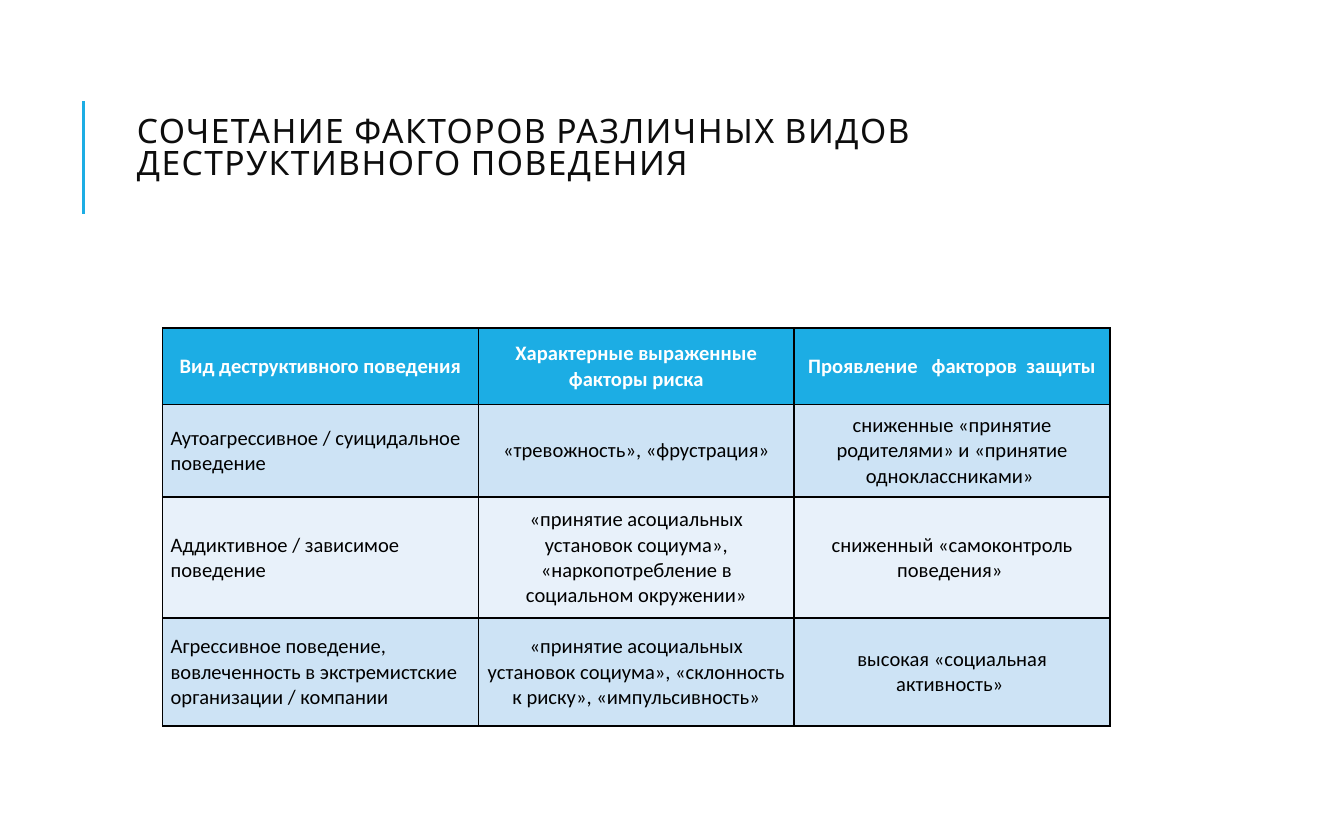
from dataclasses import dataclass

from lxml.etree import SubElement
from pptx import Presentation
from pptx.dml.color import RGBColor as RGB
from pptx.enum.shapes import MSO_CONNECTOR as CONNECTOR
from pptx.enum.text import MSO_ANCHOR as ANCHOR, PP_ALIGN as ALIGN
from pptx.oxml.ns import qn
from pptx.util import Emu, Pt

EMU_PER_PX = 9144  # 100 px to the inch


def px(length):
    return Emu(length * EMU_PER_PX)


@dataclass(frozen=True)
class Theme:
    accent: str = "1CADE4"
    title: str = "0D0D0D"
    header_text: str = "FFFFFF"
    body_text: str = "000000"
    border: str = "000000"
    bands: tuple = ("CDE3F5", "E8F1FA")
    title_font: str = "Cabin"
    table_font: str = "Calibri"
    title_size: int = 18
    table_size: int = 11
    accent_width: float = 1.5
    border_width: int = 1


class SlideBuilder:
    def __init__(self, slide, theme):
        self.slide = slide
        self.theme = theme

    def style_font(self, font, name, size, color, bold=False):
        font.name, font.size, font.bold = name, Pt(size), bold
        font.color.rgb = RGB.from_string(color)

    def accent_line(self, x1, y1, x2, y2):
        line = self.slide.shapes.add_connector(
            CONNECTOR.STRAIGHT, px(x1), px(y1), px(x2), px(y2))
        line.line.color.rgb = RGB.from_string(self.theme.accent)
        line.line.width = Pt(self.theme.accent_width)
        SubElement(line._element.spPr, qn("a:effectLst"))

    def title(self, text, left, top, width, height):
        theme = self.theme
        frame = self.slide.shapes.add_textbox(
            px(left), px(top), px(width), px(height)).text_frame
        frame.word_wrap = True
        frame.vertical_anchor = ANCHOR.MIDDLE
        frame.text = text
        heading = frame.paragraphs[0]
        heading.line_spacing = 0.8
        run = heading.runs[0]
        self.style_font(run.font, theme.title_font, theme.title_size, theme.title)
        run.font._element.set("spc", "80")

    def border(self, cell):
        properties = cell._tc.get_or_add_tcPr()
        for side in ("a:lnL", "a:lnR", "a:lnT", "a:lnB"):
            edge = SubElement(properties, qn(side),
                              w=str(Pt(self.theme.border_width)))
            fill = SubElement(edge, qn("a:solidFill"))
            SubElement(fill, qn("a:srgbClr"), val=self.theme.border)

    def cell(self, cell, text, fill, color, align, bold):
        theme = self.theme
        self.border(cell)
        cell.fill.solid()
        cell.fill.fore_color.rgb = RGB.from_string(fill)
        cell.vertical_anchor = ANCHOR.MIDDLE
        cell.margin_left = cell.margin_right = px(6)
        cell.margin_top = cell.margin_bottom = px(3)
        cell.text = text
        paragraph = cell.text_frame.paragraphs[0]
        paragraph.alignment = align
        self.style_font(paragraph.runs[0].font, theme.table_font,
                        theme.table_size, color, bold)

    def table(self, rows, left, top, column_width, row_heights):
        """Draw a header row, then banded rows whose first column is left-aligned."""
        theme = self.theme
        columns = len(rows[0])
        table = self.slide.shapes.add_table(
            len(rows), columns, px(left), px(top),
            px(column_width * columns), px(sum(row_heights))).table
        table.horz_banding = False
        for column in table.columns:
            column.width = px(column_width)
        for r, (texts, height) in enumerate(zip(rows, row_heights)):
            table.rows[r].height = px(height)
            header = r == 0
            fill = theme.accent if header else theme.bands[(r - 1) % 2]
            color = theme.header_text if header else theme.body_text
            for c, text in enumerate(texts):
                align = ALIGN.CENTER if header or c else ALIGN.LEFT
                self.cell(table.cell(r, c), text, fill, color, align, header)


FACTORS = [
    ("Вид деструктивного поведения",
     "Характерные выраженные факторы риска",
     "Проявление   факторов  защиты"),
    ("Аутоагрессивное / суицидальное поведение",
     "«тревожность», «фрустрация»",
     "сниженные «принятие родителями» и «принятие одноклассниками» "),
    ("Аддиктивное / зависимое поведение",
     "«принятие асоциальных установок социума», "
     "«наркопотребление в социальном окружении»",
     "сниженный «самоконтроль поведения» "),
    ("Агрессивное поведение, вовлеченность в экстремистские "
     "организации / компании",
     "«принятие асоциальных установок социума», "
     "«склонность к риску», «импульсивность»",
     "высокая «социальная активность» "),
]


def main():
    presentation = Presentation()
    presentation.slide_width, presentation.slide_height = px(1000), px(625)
    blank = presentation.slide_layouts[6]
    builder = SlideBuilder(presentation.slides.add_slide(blank), Theme())
    builder.accent_line(62, 159, 62, 75)
    builder.title("СОЧЕТАНИЕ ФАКТОРОВ РАЗЛИЧНЫХ ВИДОВ ДЕСТРУКТИВНОГО ПОВЕДЕНИЯ",
                  92, 81, 684, 61)
    builder.table(FACTORS, left=121, top=244, column_width=235,
                  row_heights=(57, 69, 90, 80))
    presentation.save("out.pptx")


if __name__ == "__main__":
    main()
